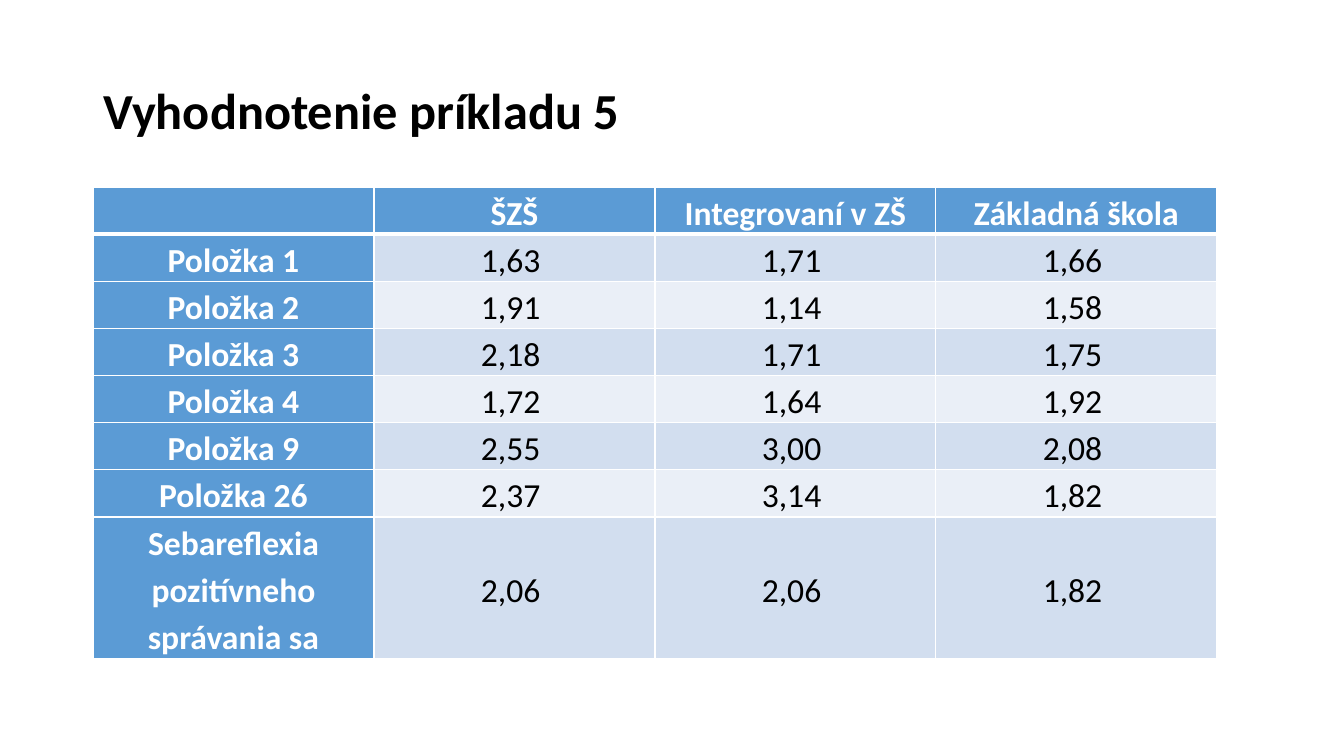
from dataclasses import dataclass

from lxml import etree
from pptx import Presentation
from pptx.dml.color import RGBColor
from pptx.enum.text import MSO_ANCHOR, MSO_AUTO_SIZE, PP_ALIGN
from pptx.oxml.ns import qn
from pptx.util import Pt

LEFT = PP_ALIGN.LEFT
CENTER = PP_ALIGN.CENTER
MIDDLE = MSO_ANCHOR.MIDDLE
NO_FIT = MSO_AUTO_SIZE.NONE
SCALE = 12192000 / 1344

HEADS = ["", "ŠZŠ", "Integrovaní v ZŠ", "Základná škola"]
ITEMS = [
    ("Položka 1", "1,63", "1,71", "1,66"),
    ("Položka 2", "1,91", "1,14", "1,58"),
    ("Položka 3", "2,18", "1,71", "1,75"),
    ("Položka 4", "1,72", "1,64", "1,92"),
    ("Položka 9", "2,55", "3,00", "2,08"),
    ("Položka 26", "2,37", "3,14", "1,82"),
    ("Sebareflexia pozitívneho správania sa", "2,06", "2,06", "1,82"),
]


@dataclass(frozen=True)
class Theme:
    font: str = "Calibri"
    ink: str = "000000"
    white: str = "FFFFFF"
    head: str = "5B9BD5"
    bands: tuple = ("D2DEEF", "EAEFF7")
    title: int = 36
    body: int = 24
    thin: int = 1
    thick: int = 3


def px(count):
    return round(count * SCALE)


def write(frame, text, *, font, size, color, bold=False, align=LEFT, spacing=1.0):
    para = frame.paragraphs[0]
    para.alignment = align
    para.line_spacing = spacing
    run = para.add_run()
    run.text = text
    run.font.name = font
    run.font.size = Pt(size)
    run.font.bold = bold
    run.font.color.rgb = RGBColor.from_string(color)


class Deck:
    def __init__(self, theme):
        self.theme = theme
        self.prs = Presentation()
        self.prs.slide_width = px(1344)
        self.prs.slide_height = px(756)
        self.slide = self.prs.slides.add_slide(self.prs.slide_layouts[5])

    def title(self, text, left, top, width, height):
        shape = self.slide.shapes.title
        shape.left, shape.top = px(left), px(top)
        shape.width, shape.height = px(width), px(height)
        frame = shape.text_frame
        frame.auto_size = NO_FIT
        frame.word_wrap = True
        frame.vertical_anchor = MIDDLE
        write(frame, text, font=self.theme.font, size=self.theme.title,
              color=self.theme.ink, bold=True, spacing=0.9)

    def border(self, cell, row):
        props = cell._tc.get_or_add_tcPr()
        widths = dict.fromkeys(("lnL", "lnR", "lnT", "lnB"), self.theme.thin)
        if row == 0:
            widths["lnB"] = self.theme.thick
        elif row == 1:
            widths["lnT"] = self.theme.thick
        for side, width in widths.items():
            line = etree.SubElement(props, qn(f"a:{side}"), w=str(Pt(width)))
            fill = etree.SubElement(line, qn("a:solidFill"))
            etree.SubElement(fill, qn("a:srgbClr"), val=self.theme.white)

    def cell(self, cell, text, row, col):
        theme = self.theme
        label = row == 0 or col == 0
        cell.margin_left = cell.margin_right = px(7)
        cell.margin_top = cell.margin_bottom = 0
        cell.vertical_anchor = MIDDLE
        self.border(cell, row)
        cell.fill.solid()
        shade = theme.head if label else theme.bands[(row - 1) % 2]
        cell.fill.fore_color.rgb = RGBColor.from_string(shade)
        if text:
            write(cell.text_frame, text if label else f"{text} ",
                  font=theme.font, size=theme.body,
                  color=theme.white if label else theme.ink,
                  bold=label, align=CENTER, spacing=1.15)

    def table(self, rows, left, top, width, heights):
        count = len(rows[0])
        grid = self.slide.shapes.add_table(
            len(rows), count, px(left), px(top),
            px(width * count), px(sum(heights))).table
        grid.first_col = True
        for col in grid.columns:
            col.width = px(width)
        for r, (values, height) in enumerate(zip(rows, heights)):
            grid.rows[r].height = px(height)
            for c, text in enumerate(values):
                self.cell(grid.cell(r, c), text, r, c)


def main():
    deck = Deck(Theme())
    deck.title("Vyhodnotenie príkladu 5", 93, 40, 1159, 146)
    deck.table([HEADS, *ITEMS], 93, 187, 281, [47] * len(ITEMS) + [141])
    deck.prs.save("out.pptx")


if __name__ == "__main__":
    main()
